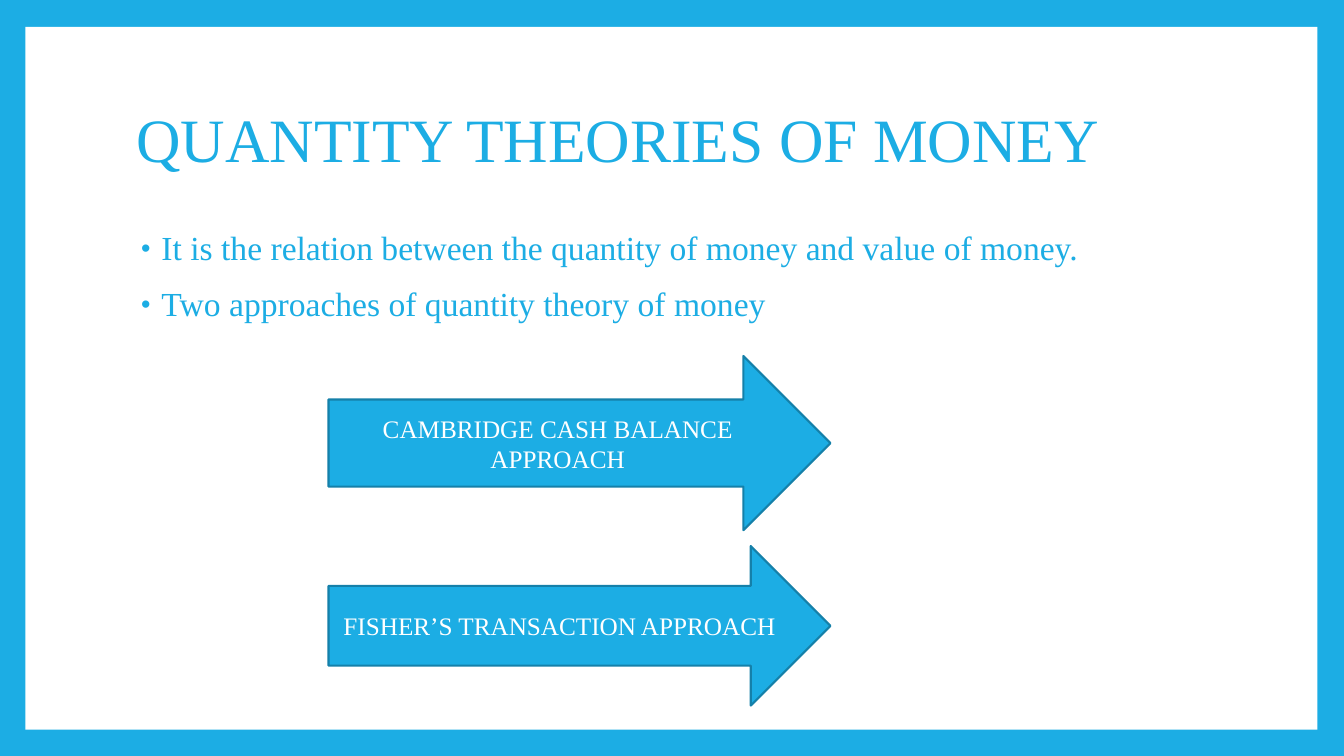
from dataclasses import dataclass

from lxml.etree import SubElement
from pptx import Presentation
from pptx.dml.color import RGBColor
from pptx.enum.shapes import MSO_SHAPE
from pptx.enum.text import MSO_ANCHOR, MSO_AUTO_SIZE, PP_ALIGN
from pptx.oxml.ns import qn
from pptx.slide import Slide
from pptx.text.text import TextFrame, _Paragraph
from pptx.util import Cm, Pt

FONT = "Times New Roman"
COLORS = {"blue": "1CADE4", "outline": "1580A9", "white": "FFFFFF"}
CONTENT_LEFT, CONTENT_WIDTH = 3.18, 27.43
ARROW_LEFT, ARROW_WIDTH = 8.28, 12.65


@dataclass
class Approach:
    text: str
    top: float
    height: float


BULLETS = [
    "It is the relation between the quantity of money and value of money.",
    "Two approaches of quantity theory of money",
]
APPROACHES = [
    Approach("CAMBRIDGE CASH BALANCE APPROACH", 8.97, 4.39),
    Approach("FISHER’S TRANSACTION APPROACH", 13.76, 4.02),
]


def color(name: str) -> RGBColor:
    return RGBColor.from_string(COLORS[name])


def write_text(frame: TextFrame, lines: list[str], *, size: float, color_name: str,
               align: PP_ALIGN = PP_ALIGN.LEFT, anchor: MSO_ANCHOR = MSO_ANCHOR.MIDDLE,
               line_spacing: float = 1.0, space_before: float = 0) -> None:
    frame.word_wrap = True
    frame.auto_size = MSO_AUTO_SIZE.NONE
    frame.vertical_anchor = anchor
    for index, line in enumerate(lines):
        paragraph = frame.add_paragraph() if index else frame.paragraphs[0]
        paragraph.alignment = align
        paragraph.line_spacing = line_spacing
        paragraph.space_before = Pt(space_before)
        run = paragraph.add_run()
        run.text = line
        run.font.name = FONT
        run.font.size = Pt(size)
        run.font.color.rgb = color(color_name)


def add_bullet(paragraph: _Paragraph) -> None:
    properties = paragraph._p.get_or_add_pPr()
    properties.set("marL", str(Cm(0.64)))
    properties.set("indent", str(-Cm(0.51)))
    bullet_color = SubElement(properties, qn("a:buClr"))
    SubElement(bullet_color, qn("a:srgbClr"), val=COLORS["blue"])
    SubElement(properties, qn("a:buSzPct"), val="80000")
    SubElement(properties, qn("a:buFont"), typeface="Arial")
    SubElement(properties, qn("a:buChar"), char="•")


def add_frame(slide: Slide) -> None:
    slide.background.fill.solid()
    slide.background.fill.fore_color.rgb = color("blue")
    panel = slide.shapes.add_shape(MSO_SHAPE.RECTANGLE, Cm(0.64), Cm(0.68), Cm(32.56), Cm(17.71))
    panel.shadow.inherit = False
    panel.fill.solid()
    panel.fill.fore_color.rgb = color("white")
    panel.line.fill.background()
    # Bring the title in front of the panel
    panel._element.addnext(slide.shapes.title._element)


def add_title(slide: Slide) -> None:
    title = slide.shapes.title
    title.left, title.top = Cm(CONTENT_LEFT), Cm(1.7)
    title.width, title.height = Cm(CONTENT_WIDTH), Cm(3.76)
    write_text(title.text_frame, ["QUANTITY THEORIES OF MONEY"], size=44,
               color_name="blue", line_spacing=0.9)


def add_bullets(slide: Slide) -> None:
    body = slide.shapes.add_textbox(Cm(CONTENT_LEFT), Cm(5.72), Cm(CONTENT_WIDTH), Cm(11.23))
    write_text(body.text_frame, BULLETS, size=24, color_name="blue",
               anchor=MSO_ANCHOR.TOP, line_spacing=0.9, space_before=14)
    for paragraph in body.text_frame.paragraphs:
        add_bullet(paragraph)


def add_arrow(slide: Slide, approach: Approach) -> None:
    arrow = slide.shapes.add_shape(MSO_SHAPE.RIGHT_ARROW, Cm(ARROW_LEFT), Cm(approach.top),
                                   Cm(ARROW_WIDTH), Cm(approach.height))
    arrow.shadow.inherit = False
    arrow.fill.solid()
    arrow.fill.fore_color.rgb = color("blue")
    arrow.line.color.rgb = color("outline")
    arrow.line.width = Pt(1.5)
    write_text(arrow.text_frame, [approach.text], size=18, color_name="white",
               align=PP_ALIGN.CENTER)


def main() -> None:
    presentation = Presentation()
    presentation.slide_width, presentation.slide_height = Cm(33.87), Cm(19.05)
    slide = presentation.slides.add_slide(presentation.slide_layouts[5])

    # Border and title
    add_frame(slide)
    add_title(slide)

    # Definition and the two approaches
    add_bullets(slide)
    for approach in APPROACHES:
        add_arrow(slide, approach)

    presentation.save("out.pptx")


if __name__ == "__main__":
    main()
